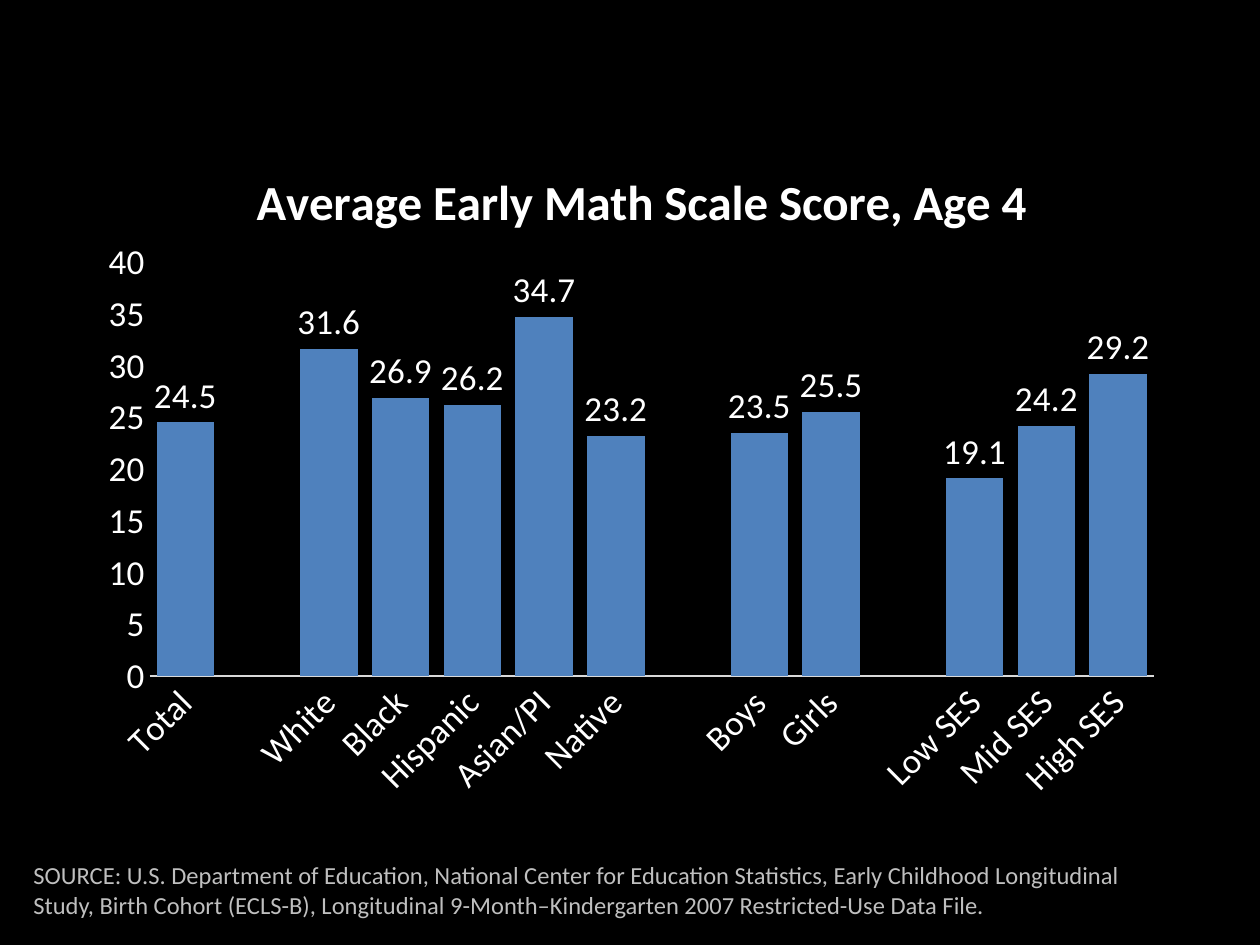
from pptx import Presentation
from pptx.chart.data import CategoryChartData
from pptx.dml.color import RGBColor
from pptx.enum import chart as ch, text
from pptx.oxml import parse_xml
from pptx.oxml.ns import nsdecls, qn
from pptx.util import Pt

BLACK = RGBColor(0x00, 0x00, 0x00)
WHITE = RGBColor(0xFF, 0xFF, 0xFF)
BLUE = RGBColor(0x4F, 0x81, 0xBD)
AXIS_GRAY = RGBColor(0xD9, 0xD9, 0xD9)
SOURCE_GRAY = RGBColor(0xBF, 0xBF, 0xBF)
FONT = "Calibri"

SCORES = [
    ("Total", 24.5), ("", None),
    ("White", 31.6), ("Black", 26.9), ("Hispanic", 26.2),
    ("Asian/PI", 34.7), ("Native", 23.2), ("", None),
    ("Boys", 23.5), ("Girls", 25.5), ("", None),
    ("Low SES", 19.1), ("Mid SES", 24.2), ("High SES", 29.2),
]
SOURCE = (
    "SOURCE: U.S. Department of Education, National Center for Education "
    "Statistics, Early Childhood Longitudinal Study, Birth Cohort (ECLS-B), "
    "Longitudinal 9-Month–Kindergarten 2007 Restricted-Use Data File."
)


def format_font(font, size, color, bold=False):
    font.name = FONT
    font.size = Pt(size)
    font.bold = bold
    font.color.rgb = color


def set_layout(element, index, target="", **fractions):
    for layout in element.findall(qn("c:layout")):
        element.remove(layout)
    modes = "".join(f'<c:{axis}Mode val="edge"/>' for axis in "xy")
    values = "".join(f'<c:{key} val="{value}"/>' for key, value in fractions.items())
    element.insert(index, parse_xml(
        f'<c:layout {nsdecls("c")}><c:manualLayout>{target}{modes}{values}'
        "</c:manualLayout></c:layout>"))


def add_score_chart(slide, left, top, width, height):
    data = CategoryChartData(number_format="0.0")
    data.categories = [name for name, score in SCORES]
    data.add_series("Series 1", [score for name, score in SCORES])
    chart = slide.shapes.add_chart(
        ch.XL_CHART_TYPE.COLUMN_CLUSTERED,
        Pt(left), Pt(top), Pt(width), Pt(height), data).chart
    chart.has_legend = False
    format_font(chart.font, 20, WHITE)

    chart.has_title = True
    title = chart.chart_title
    paragraph = title.text_frame.paragraphs[0]
    paragraph.text = "Average Early Math Scale Score, Age 4"
    format_font(paragraph.font, 28, WHITE, bold=True)
    set_layout(title._element, 1, x=0.15, y=0.04)

    plot = chart.plots[0]
    plot.gap_width = 25
    plot.vary_by_categories = False
    fill = plot.series[0].format.fill
    fill.solid()
    fill.fore_color.rgb = BLUE
    plot.has_data_labels = True
    labels = plot.data_labels
    labels.show_value = True
    labels.position = ch.XL_LABEL_POSITION.OUTSIDE_END
    format_font(labels.font, 20, WHITE)

    for axis in (chart.category_axis, chart.value_axis):
        axis.has_major_gridlines = False
        axis.major_tick_mark = ch.XL_TICK_MARK.NONE
        axis.minor_tick_mark = ch.XL_TICK_MARK.NONE
        format_font(axis.tick_labels.font, 20, WHITE)
    axis_line = chart.category_axis.format.line
    axis_line.color.rgb = AXIS_GRAY
    axis_line.width = Pt(0.75)
    body = chart.category_axis._element.find(qn("c:txPr")).find(qn("a:bodyPr"))
    body.set("rot", "-2700000")
    body.set("vert", "horz")

    value_axis = chart.value_axis
    value_axis.minimum_scale = 0
    value_axis.maximum_scale = 40
    value_axis.major_unit = 5
    value_axis.tick_labels.number_format = "0"
    value_axis.tick_labels.number_format_is_linked = False
    value_axis.format.line.fill.background()
    plot_area = chart._chartSpace.chart.plotArea
    set_layout(plot_area, 0, '<c:layoutTarget val="inner"/>',
               x=0.06, y=0.19, w=0.92, h=0.61)


def add_source_note(slide, left, top, width, height):
    shape = slide.shapes.add_textbox(Pt(left), Pt(top), Pt(width), Pt(height))
    frame = shape.text_frame
    frame.word_wrap = True
    frame.auto_size = text.MSO_AUTO_SIZE.SHAPE_TO_FIT_TEXT
    paragraph = frame.paragraphs[0]
    paragraph.text = SOURCE
    format_font(paragraph.font, 14, SOURCE_GRAY)


def main():
    presentation = Presentation()
    presentation.slide_width = Pt(720)
    presentation.slide_height = Pt(540)
    slide = presentation.slides.add_slide(presentation.slide_layouts[6])
    slide.background.fill.solid()
    slide.background.fill.fore_color.rgb = BLACK
    add_score_chart(slide, 48, 76, 624, 388)
    add_source_note(slide, 12, 488, 648, 41)
    presentation.save("out.pptx")


if __name__ == "__main__":
    main()
